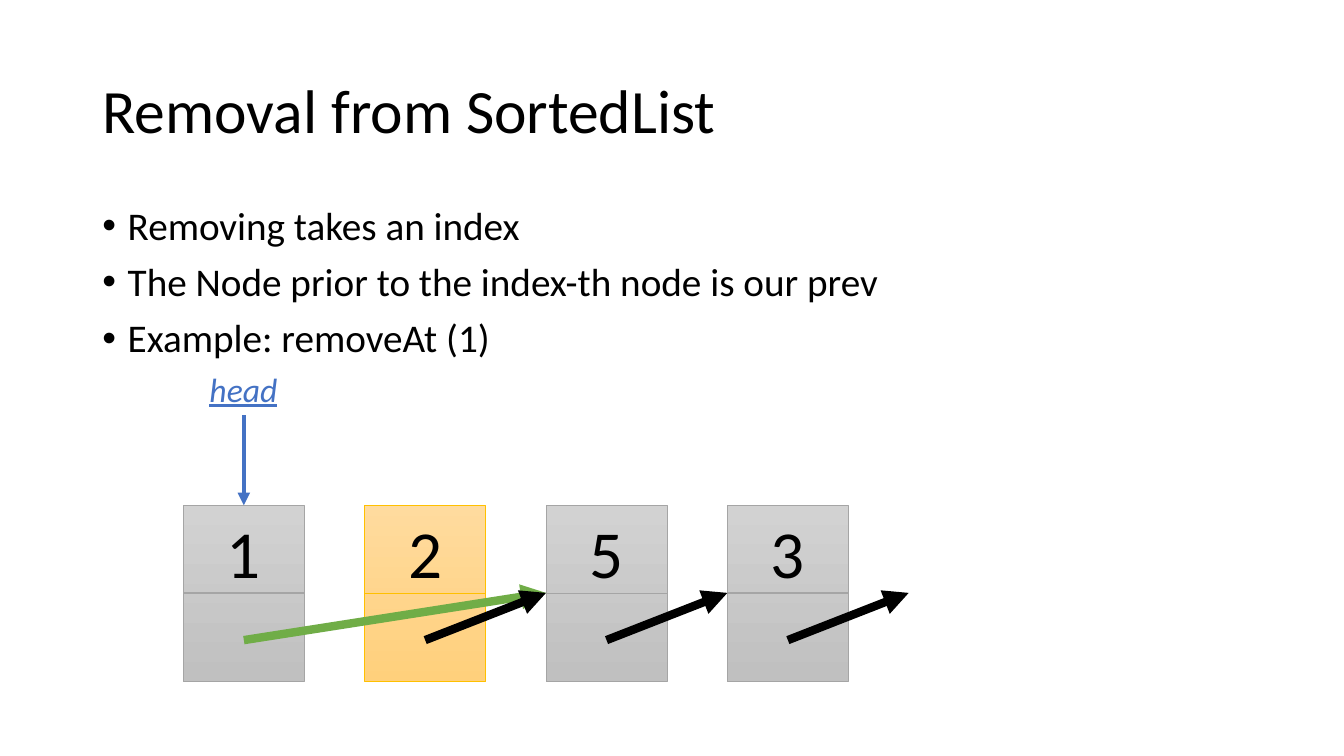
import pptx
import pptx.dml.color
import pptx.enum.shapes
import pptx.enum.text
import pptx.oxml.ns
import pptx.util
from lxml import etree
from pptx.util import Cm

COLORS = {
    "text": "000000",
    "head": "4472C4",
    "bypass": "70AD47",
    "gray_top": "D2D2D2", "gray_bottom": "C0C0C0", "gray_line": "A5A5A5",
    "gold_top": "FFDB9E", "gold_bottom": "FFD07C", "gold_line": "FFC000",
}
FONT = "Calibri"

# Linked list geometry
NODE_LEFT, NODE_TOP = Cm(4.62), Cm(12.73)
NODE_WIDTH, NODE_HEIGHT = Cm(3.05), Cm(4.45)
NODE_STEP = Cm(4.57)
DIVIDER_Y = Cm(14.94)
POINTER_Y = Cm(16.13)

# Value, colour family and divider width of each node
NODES = [("1", "gray", 1), ("2", "gold", 0.5), ("5", "gray", 0.5), ("3", "gray", 1)]
BULLETS = [
    "Removing takes an index",
    "The Node prior to the index-th node is our prev",
    "Example: removeAt (1)",
]


def rgb(name):
    return pptx.dml.color.RGBColor.from_string(COLORS[name])


def node_left(index):
    return NODE_LEFT + index * NODE_STEP


def node_center(index):
    return node_left(index) + NODE_WIDTH // 2


def format_text(para, size, color="text"):
    for span in para.runs:
        span.font.name = FONT
        span.font.size = pptx.util.Pt(size)
        span.font.color.rgb = rgb(color)


def add_title(page, text):
    title = page.shapes.title
    title.left, title.top, title.width, title.height = Cm(2.33), Cm(1.01), Cm(29.21), Cm(3.68)
    frame = title.text_frame
    frame.text = text
    frame.vertical_anchor = pptx.enum.text.MSO_ANCHOR.MIDDLE
    para = frame.paragraphs[0]
    para.alignment = pptx.enum.text.PP_ALIGN.LEFT
    para.line_spacing = 0.9
    format_text(para, 44)


def add_bullets(page, lines):
    box = page.shapes.add_textbox(Cm(2.33), Cm(5.07), Cm(29.21), Cm(12.09))
    frame = box.text_frame
    frame.word_wrap = True
    frame.text = "\n".join(lines)
    for para in frame.paragraphs:
        para.line_spacing = 0.9
        para.space_before = pptx.util.Pt(10)
        format_text(para, 28)
        properties = para._p.get_or_add_pPr()
        properties.set("marL", str(Cm(0.64)))
        properties.set("indent", str(-Cm(0.64)))
        font = etree.SubElement(properties, pptx.oxml.ns.qn("a:buFont"))
        font.set("typeface", "Arial")
        bullet = etree.SubElement(properties, pptx.oxml.ns.qn("a:buChar"))
        bullet.set("char", "•")


def add_line(shapes, start, end, color, width, arrow=False):
    line = shapes.add_connector(pptx.enum.shapes.MSO_CONNECTOR.STRAIGHT, *start, *end)
    line.line.color.rgb = rgb(color)
    line.line.width = pptx.util.Pt(width)
    if arrow:
        tail = etree.SubElement(line.line._get_or_add_ln(), pptx.oxml.ns.qn("a:tailEnd"))
        tail.set("type", "triangle")
    etree.SubElement(line._element.spPr, pptx.oxml.ns.qn("a:effectLst"))


def add_node(page, index, value, family, divider_width):
    group = page.shapes.add_group_shape()
    left = node_left(index)
    box = group.shapes.add_shape(
        pptx.enum.shapes.MSO_SHAPE.RECTANGLE, left, NODE_TOP, NODE_WIDTH, NODE_HEIGHT)
    box.shadow.inherit = False
    box.fill.gradient()
    box.fill.gradient_angle = 270
    for stop, end in zip(box.fill.gradient_stops, ("top", "bottom")):
        stop.color.rgb = rgb(f"{family}_{end}")
    box.line.color.rgb = rgb(f"{family}_line")
    box.line.width = pptx.util.Pt(0.5)

    # The value sits in the upper half
    frame = box.text_frame
    frame.text = value
    frame.vertical_anchor = pptx.enum.text.MSO_ANCHOR.TOP
    frame.margin_top = Cm(0.15)
    frame.paragraphs[0].alignment = pptx.enum.text.PP_ALIGN.CENTER
    format_text(frame.paragraphs[0], 48)

    add_line(group.shapes, (left, DIVIDER_Y), (left + NODE_WIDTH, DIVIDER_Y),
             f"{family}_line", divider_width)


def add_pointer(page, source, target, color):
    add_line(page.shapes, (node_center(source), POINTER_Y), (node_left(target), DIVIDER_Y),
             color, 6, arrow=True)


def add_head(page):
    box = page.shapes.add_textbox(Cm(5.03), Cm(9.17), Cm(2.26), Cm(1.28))
    frame = box.text_frame
    frame.word_wrap = False
    frame.text = "head"
    para = frame.paragraphs[0]
    format_text(para, 24, "head")
    para.runs[0].font.italic = True
    para.runs[0].font.underline = True
    center = node_center(0)
    add_line(page.shapes, (center, Cm(10.46)), (center, NODE_TOP), "head", 3, arrow=True)


def main():
    deck = pptx.Presentation()
    deck.slide_width, deck.slide_height = Cm(33.87), Cm(19.05)
    page = deck.slides.add_slide(deck.slide_layouts.get_by_name("Title Only"))

    # Title and explanation
    add_title(page, "Removal from SortedList")
    add_bullets(page, BULLETS)

    # Nodes, then the new link past the removed node, then the old links
    for index, node in enumerate(NODES):
        add_node(page, index, *node)
    add_pointer(page, 0, 2, "bypass")
    for index in range(1, len(NODES)):
        add_pointer(page, index, index + 1, "text")
    add_head(page)

    deck.save("out.pptx")


if __name__ == "__main__":
    main()
